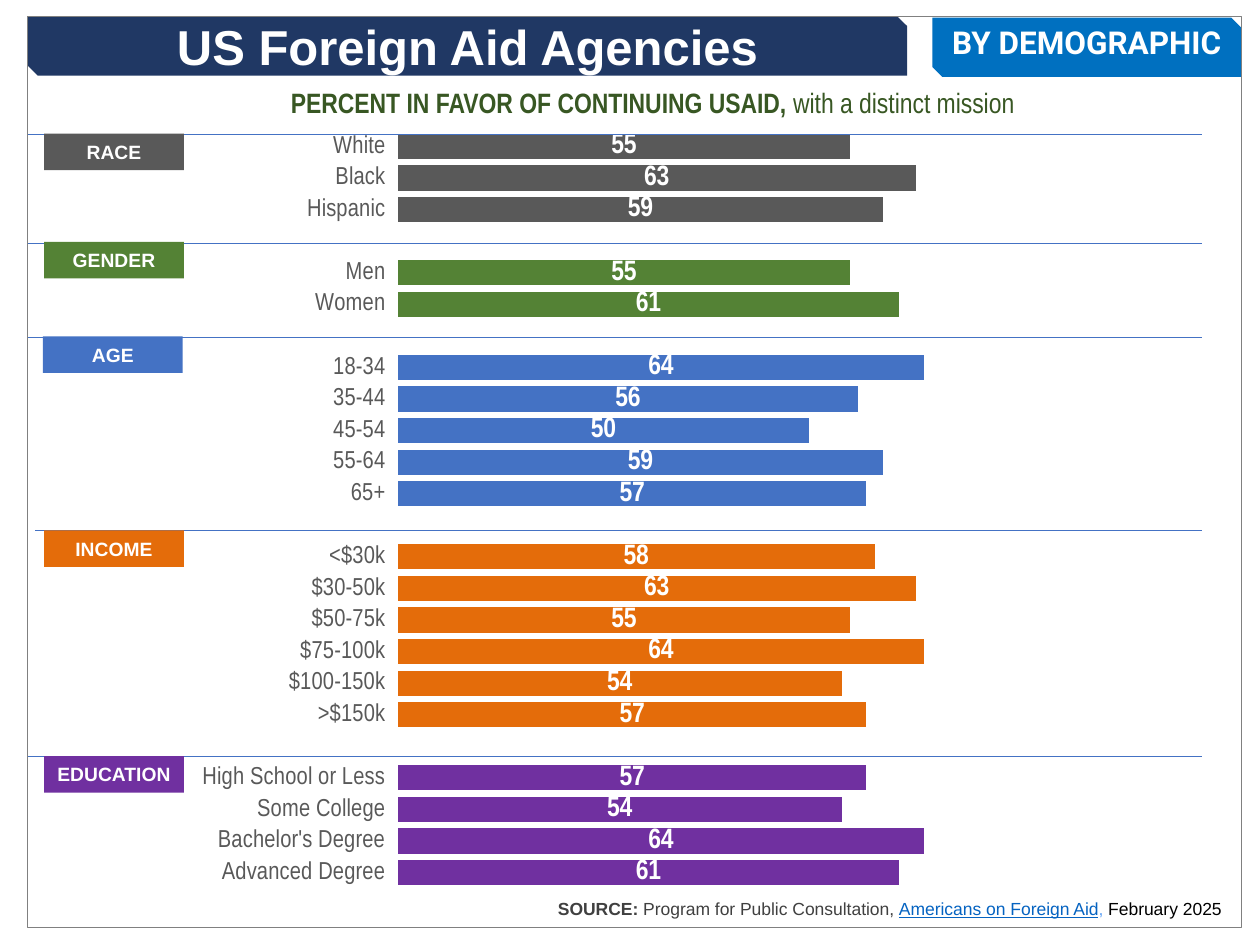
from lxml import etree
from pptx import Presentation
from pptx.chart.data import CategoryChartData
from pptx.dml.color import RGBColor
from pptx.enum.chart import XL_CHART_TYPE, XL_TICK_LABEL_POSITION, XL_TICK_MARK
from pptx.enum.shapes import MSO_CONNECTOR, MSO_SHAPE
from pptx.enum.text import MSO_ANCHOR, PP_ALIGN
from pptx.oxml import parse_xml
from pptx.oxml.ns import nsdecls, qn
from pptx.util import Inches, Pt

BAR_STACKED = XL_CHART_TYPE.BAR_STACKED
NO_TICK = XL_TICK_MARK.NONE
LABELS_LOW = XL_TICK_LABEL_POSITION.LOW
NO_LABELS = XL_TICK_LABEL_POSITION.NONE
STRAIGHT = MSO_CONNECTOR.STRAIGHT
RECTANGLE = MSO_SHAPE.RECTANGLE
SNIPPED = MSO_SHAPE.SNIP_2_DIAG_RECTANGLE
TOP, MIDDLE = MSO_ANCHOR.TOP, MSO_ANCHOR.MIDDLE
LEFT, CENTER = PP_ALIGN.LEFT, PP_ALIGN.CENTER

COLORS = {
    "white": "FFFFFF", "black": "000000", "gray": "595959", "green": "548235",
    "blue": "4472C4", "orange": "E46C0A", "purple": "7030A0", "navy": "203864",
    "azure": "0070C0", "forest": "385723", "charcoal": "404040",
    "link": "0563C1", "pale": "63A4F7", "frame": "808080",
}
RGB = {name: RGBColor.from_string(value) for name, value in COLORS.items()}

GROUPS = [
    ("RACE", "gray", 0.35, 1.06, 0.22, 1.07,
     [("White", 55), ("Black", 63), ("Hispanic", 59)]),
    ("GENDER", "green", 0.35, 1.92, 0.22, 1.93,
     [("Men", 55), ("Women", 61)]),
    ("AGE", "blue", 0.34, 2.67, 0.22, 2.68,
     [("18-34", 64), ("35-44", 56), ("45-54", 50), ("55-64", 59), ("65+", 57)]),
    ("INCOME", "orange", 0.35, 4.21, 0.28, 4.21,
     [("<$30k", 58), ("$30-50k", 63), ("$50-75k", 55), ("$75-100k", 64),
      ("$100-150k", 54), (">$150k", 57)]),
    ("EDUCATION", "purple", 0.35, 6, 0.22, 6,
     [("High School or Less", 57), ("Some College", 54),
      ("Bachelor's Degree", 64), ("Advanced Degree", 61)]),
]


def add_box(page, shape_type, left, top, width, height, fill=None):
    box = page.shapes.add_shape(
        shape_type, Inches(left), Inches(top), Inches(width), Inches(height))
    box.shadow.inherit = False
    box.line.fill.background()
    if fill:
        box.fill.solid()
        box.fill.fore_color.rgb = RGB[fill]
    else:
        box.fill.background()
    return box


def write_text(box, spans, size, font, anchor=MIDDLE, align=CENTER, wrap=True):
    frame = box.text_frame
    frame.word_wrap = wrap
    frame.vertical_anchor = anchor
    para = frame.paragraphs[0]
    para.alignment = align
    for text, color, bold, underline in spans:
        span = para.add_run()
        span.text = text
        span.font.name = font
        span.font.size = Pt(size)
        span.font.bold = bold
        span.font.underline = underline
        span.font.color.rgb = RGB[color]
    return para


deck = Presentation()
deck.slide_width = Inches(10)
deck.slide_height = Inches(7.5)
page = deck.slides.add_slide(deck.slide_layouts[6])

categories, values, bar_colors = [], [], []
for name, color, tag_left, tag_top, line_left, line_top, rows in reversed(GROUPS):
    if categories:
        categories.append("")
        values.append(None)
        bar_colors.append(None)
    for label, value in reversed(rows):
        categories.append(label)
        values.append(value)
        bar_colors.append(color)

data = CategoryChartData(number_format="#,##0")
data.categories = categories
data.add_series("Series 1", values)
chart = page.shapes.add_chart(
    BAR_STACKED, Inches(1.16), Inches(0.23), Inches(15.37), Inches(7.77), data).chart
chart.has_legend = False
chart.has_title = False
chart.font.name = "Arial Narrow"
chart.font.size = Pt(14)

for axis in (chart.category_axis, chart.value_axis):
    axis.major_tick_mark = NO_TICK
    axis.minor_tick_mark = NO_TICK
    axis.has_major_gridlines = False
    axis.format.line.fill.background()
    axis.tick_labels.font.name = "Arial Narrow"
    axis.tick_labels.font.size = Pt(14)
    axis.tick_labels.font.color.rgb = RGB["gray"]
chart.category_axis.tick_label_position = LABELS_LOW
chart.value_axis.tick_label_position = NO_LABELS
chart.value_axis.minimum_scale = 0
chart.value_axis.maximum_scale = 180

plot = chart.plots[0]
plot.gap_width = 25
plot.overlap = 100
plot.vary_by_categories = False
plot.has_data_labels = True
labels = plot.data_labels
labels.show_value = True
labels.number_format = "#,##0"
labels.number_format_is_linked = False
labels.font.name = "Arial Narrow"
labels.font.size = Pt(16)
labels.font.bold = True
labels.font.color.rgb = RGB["white"]

series = plot.series[0]
series.format.fill.solid()
series.format.fill.fore_color.rgb = RGB["gray"]
for index, color in enumerate(bar_colors):
    if color:
        bar = series.points[index].format.fill
        bar.solid()
        bar.fore_color.rgb = RGB[color]

plot_area = chart._chartSpace.chart.plotArea
for old_layout in plot_area.findall(qn("c:layout")):
    plot_area.remove(old_layout)
layout = parse_xml(f"<c:layout {nsdecls('c')}><c:manualLayout/></c:layout>")
for tag, value in [("layoutTarget", "inner"), ("xMode", "edge"), ("yMode", "edge"),
                   ("x", "0.13"), ("y", "0.104"), ("w", "0.764"), ("h", "0.774")]:
    etree.SubElement(layout[0], qn(f"c:{tag}")).set("val", value)
plot_area.insert(0, layout)

for name, color, tag_left, tag_top, line_left, line_top, rows in GROUPS:
    divider = page.shapes.add_connector(
        STRAIGHT, Inches(line_left), Inches(line_top),
        Inches(line_left + 10.13), Inches(line_top))
    divider.line.color.rgb = RGB["blue"]
    divider.line.width = Pt(0.5)
    etree.SubElement(divider._element.spPr, qn("a:effectLst"))
    tag_box = add_box(page, RECTANGLE, tag_left, tag_top, 1.11, 0.29, color)
    write_text(tag_box, [(name, "white", True, False)], 11, "Arial", wrap=False)

title = add_box(page, SNIPPED, 0.22, 0.13, 6.98, 0.47, "navy")
write_text(title, [("US Foreign Aid Agencies", "white", True, False)], 28, "Arial")

badge = add_box(page, SNIPPED, 7.4, 0.14, 2.45, 0.47, "azure")
badge_para = write_text(
    badge, [("BY DEMOGRAPHIC", "white", True, False)], 18, "Roboto", TOP)
badge_para.line_spacing = Pt(16)
badge.text_frame.margin_top = Inches(0.08)

add_box(page, RECTANGLE, 9.54, 0.88, 0.57, 5.76, "white")

source = page.shapes.add_textbox(Inches(4.33), Inches(7.08), Inches(5.52), Inches(0.27))
write_text(source, [
    ("SOURCE: ", "charcoal", True, False),
    ("Program for Public Consultation, ", "charcoal", False, False),
    ("Americans on Foreign Aid", "link", False, True),
    (", ", "pale", False, False),
    ("February 2025", "black", False, False),
], 10, "Arial", TOP, LEFT, False)

subtitle = page.shapes.add_textbox(Inches(1.99), Inches(0.63), Inches(6.38), Inches(0.37))
write_text(subtitle, [
    ("PERCENT IN FAVOR OF CONTINUING USAID, ", "forest", True, False),
    ("with a distinct mission", "forest", False, False),
], 16, "Arial Narrow", TOP)

border = add_box(page, RECTANGLE, 0.22, 0.13, 9.63, 7.23)
border.line.color.rgb = RGB["frame"]
border.line.width = Pt(0.25)

deck.save("out.pptx")
